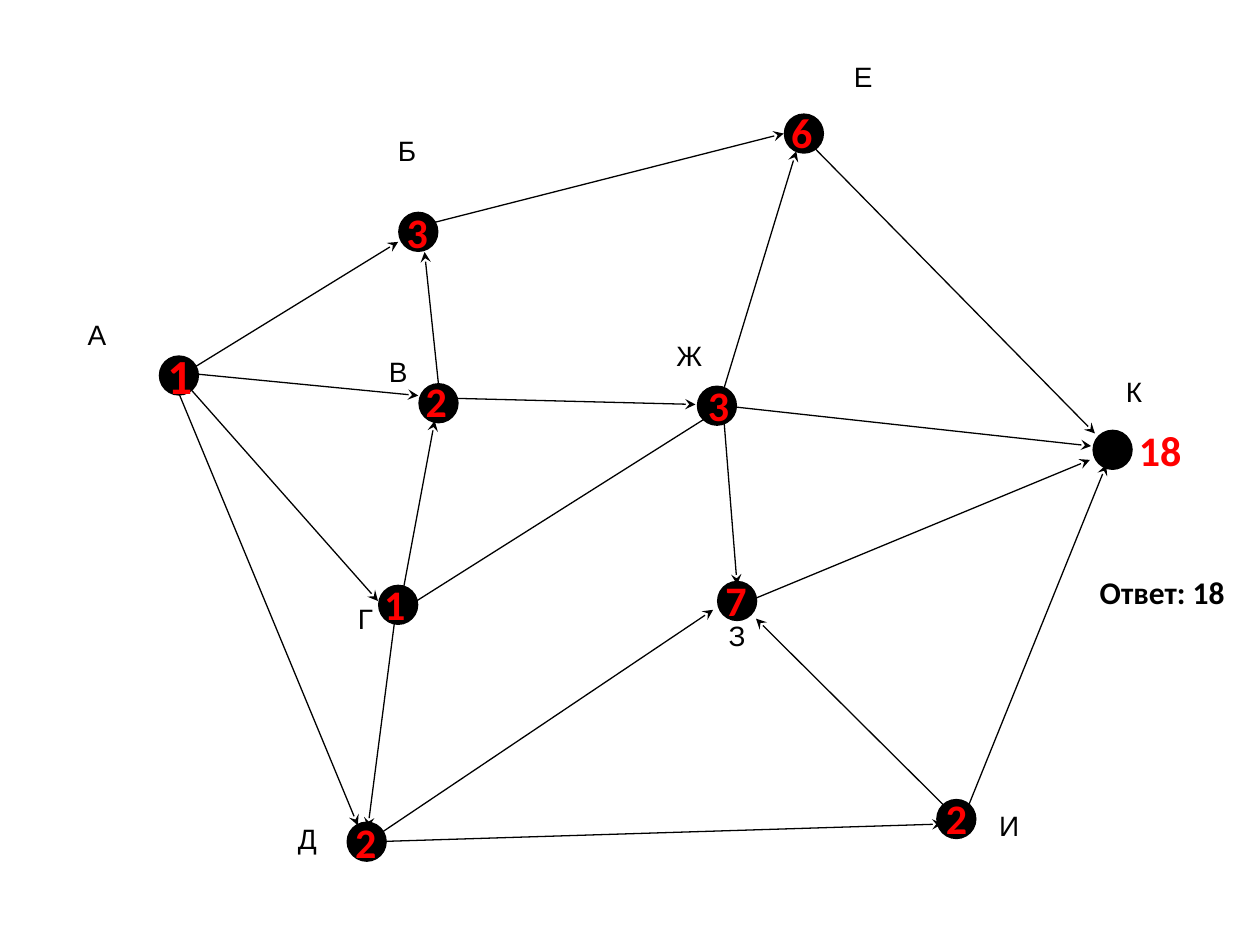
from typing import NamedTuple, Optional

from lxml.etree import SubElement
from pptx import Presentation
from pptx.dml.color import RGBColor
from pptx.enum.shapes import MSO_CONNECTOR, MSO_SHAPE
from pptx.enum.text import MSO_ANCHOR, MSO_AUTO_SIZE, PP_ALIGN
from pptx.oxml.ns import qn
from pptx.util import Inches, Pt

BLACK = RGBColor(0x00, 0x00, 0x00)
WHITE = RGBColor(0xFF, 0xFF, 0xFF)
RED = RGBColor(0xFF, 0x00, 0x00)
NODE_SIZE = 0.32
LETTER_SIZE = 0.62


class Node(NamedTuple):
    letter: str
    left: float
    top: float
    letter_left: float
    letter_top: float
    white_box: bool = False


class Edge(NamedTuple):
    x1: float
    y1: float
    x2: float
    y2: float


class Count(NamedTuple):
    text: str
    left: float
    top: float
    width: float = 0.5
    height: float = 0.5
    size: int = 24
    color: RGBColor = RED
    wrap: bool = True


NODES = [
    Node("А", 1.26, 2.82, 0.46, 2.52, True),
    Node("Б", 3.16, 1.68, 2.92, 1.06, True),
    Node("В", 3.32, 3.04, 2.85, 2.81),
    Node("Г", 3.00, 4.64, 2.59, 4.77),
    Node("Д", 2.75, 6.52, 2.13, 6.52),
    Node("Е", 6.22, 0.90, 6.54, 0.47, True),
    Node("Ж", 5.53, 3.06, 5.16, 2.69),
    Node("З", 5.69, 4.61, 5.54, 4.91),
    Node("И", 7.43, 6.34, 7.70, 6.42),
    Node("К", 8.67, 3.41, 8.69, 2.97, True),
]

EDGES = [
    Edge(1.47, 2.96, 3.16, 1.92),  # А-Б
    Edge(1.47, 2.96, 3.32, 3.14),  # А-В
    Edge(1.47, 3.04, 3.00, 4.77),  # А-Г
    Edge(1.39, 3.05, 2.84, 6.55),  # А-Д
    Edge(3.43, 1.77, 6.22, 1.06),  # Б-Е
    Edge(3.50, 3.24, 3.37, 2.00),  # В-Б
    Edge(3.55, 3.16, 5.52, 3.21),  # В-Ж
    Edge(3.18, 4.79, 3.45, 3.34),  # Г-В
    Edge(3.15, 4.79, 2.92, 6.57),  # Г-Д
    Edge(3.21, 4.83, 5.71, 3.25),  # Г-Ж
    Edge(2.95, 6.66, 5.66, 4.84),  # Д-З
    Edge(2.98, 6.68, 7.48, 6.54),  # Д-И
    Edge(6.44, 1.15, 8.69, 3.44),  # Е-К
    Edge(5.71, 3.20, 6.32, 1.20),  # Ж-Е
    Edge(5.74, 3.26, 5.85, 4.64),  # Ж-З
    Edge(5.74, 3.22, 8.66, 3.54),  # Ж-К
    Edge(5.92, 4.78, 8.65, 3.65),  # З-К
    Edge(7.53, 6.43, 6.00, 4.91),  # И-З
    Edge(7.68, 6.41, 8.78, 3.69),  # И-К
]

COUNTS = [
    Count("1", 1.23, 2.69, 0.71, 0.57, size=28),
    Count("1", 2.95, 4.54),
    Count("2", 2.72, 6.43),
    Count("2", 3.28, 2.93),
    Count("3", 3.13, 1.59),
    Count("3", 5.52, 2.96),
    Count("2", 7.41, 6.24),
    Count("6", 6.18, 0.80),
    Count("7", 5.66, 4.51),
    Count("18", 8.94, 3.32, 0.83),
    Count("Ответ: 18", 8.63, 4.50, 1.2, 0.4, size=18, color=BLACK, wrap=False),
]


def add_text(shapes, text: str, box: tuple, font_name: str, size: int,
             color: RGBColor, bold: Optional[bool] = None):
    label = shapes.add_textbox(*map(Inches, box))
    label.text_frame.text = text
    label.text_frame.word_wrap = True
    label.text_frame.vertical_anchor = MSO_ANCHOR.TOP
    font = label.text_frame.paragraphs[0].runs[0].font
    font.name, font.size, font.bold = font_name, Pt(size), bold
    font.color.rgb = color
    return label


def add_letter(shapes, node: Node) -> None:
    box = (node.letter_left, node.letter_top, LETTER_SIZE, LETTER_SIZE)
    letter = add_text(shapes, node.letter, box, "Arial", 16, BLACK)
    frame = letter.text_frame
    frame.margin_left = frame.margin_right = 0
    frame.margin_top = frame.margin_bottom = 0
    frame.paragraphs[0].alignment = PP_ALIGN.CENTER
    if node.white_box:
        letter.fill.solid()
        letter.fill.fore_color.rgb = WHITE


def add_node(shapes, node: Node) -> None:
    circle = shapes.add_shape(MSO_SHAPE.OVAL, Inches(node.left), Inches(node.top),
                              Inches(NODE_SIZE), Inches(NODE_SIZE))
    circle.shadow.inherit = False
    circle.fill.solid()
    circle.fill.fore_color.rgb = BLACK
    circle.line.fill.background()


def add_edge(shapes, edge: Edge) -> None:
    arrow = shapes.add_connector(MSO_CONNECTOR.STRAIGHT, *map(Inches, edge))
    arrow.line.color.rgb = BLACK
    arrow.line.width = Pt(0.75)
    # Stealth arrowhead, no shadow
    SubElement(arrow.line._get_or_add_ln(), qn("a:tailEnd"), type="stealth")
    SubElement(arrow._element.spPr, qn("a:effectLst"))


def add_count(shapes, count: Count) -> None:
    box = (count.left, count.top, count.width, count.height)
    label = add_text(shapes, count.text, box, "Calibri", count.size, count.color, True)
    label.text_frame.word_wrap = count.wrap
    label.text_frame.auto_size = MSO_AUTO_SIZE.SHAPE_TO_FIT_TEXT


def main() -> None:
    prs = Presentation()
    prs.slide_width, prs.slide_height = Inches(10), Inches(7.5)
    slide = prs.slides.add_slide(prs.slide_layouts[6])

    # Road graph: letters, towns and one-way roads
    graph = slide.shapes.add_group_shape().shapes
    for node in NODES:
        add_letter(graph, node)
    for node in NODES:
        add_node(graph, node)
    for edge in EDGES:
        add_edge(graph, edge)

    # Number of routes to each town, and the answer
    for count in COUNTS:
        add_count(slide.shapes, count)

    prs.save("out.pptx")


if __name__ == "__main__":
    main()
